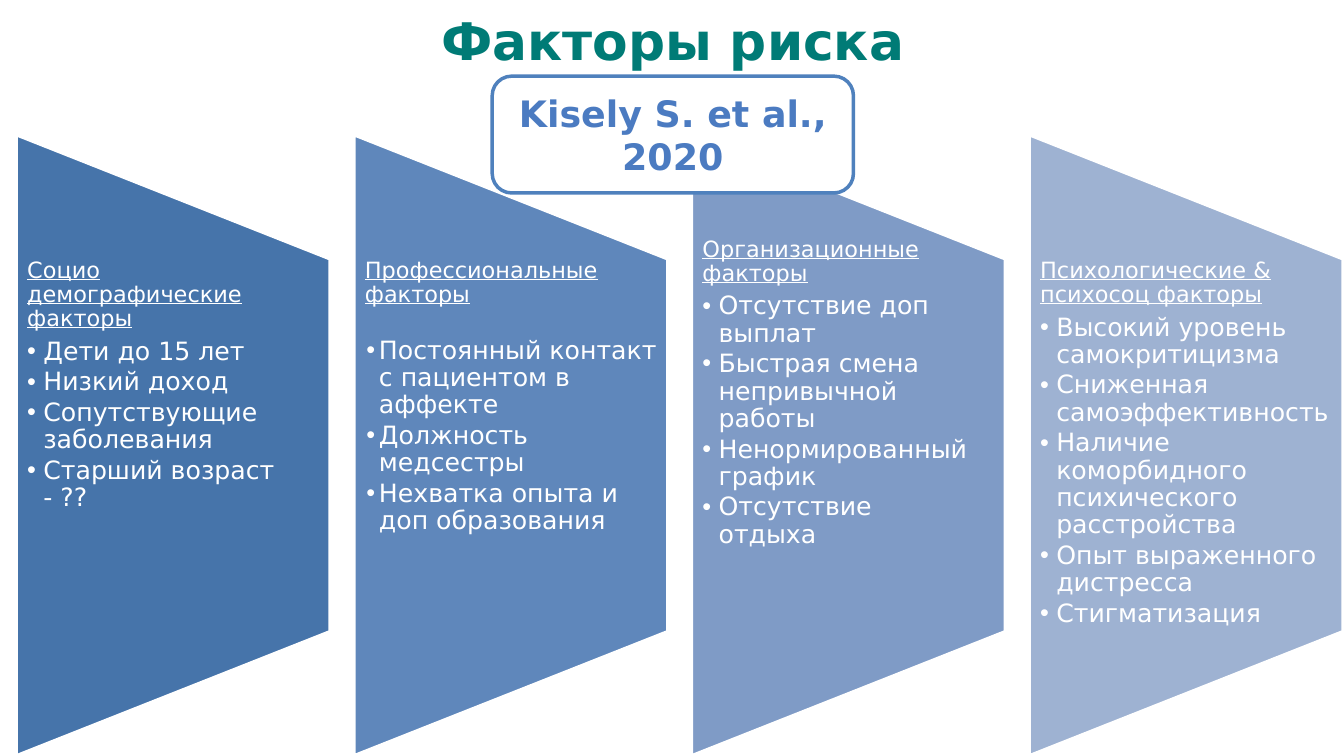
from dataclasses import dataclass

from lxml import etree
from pptx import Presentation
from pptx.dml.color import RGBColor
from pptx.enum.shapes import MSO_SHAPE
from pptx.enum.text import MSO_ANCHOR, MSO_AUTO_SIZE, PP_ALIGN
from pptx.oxml.ns import qn
from pptx.util import Inches, Pt

ROUNDED = MSO_SHAPE.ROUNDED_RECTANGLE
TOP, MIDDLE = MSO_ANCHOR.TOP, MSO_ANCHOR.MIDDLE
LEFT, CENTER = PP_ALIGN.LEFT, PP_ALIGN.CENTER
NO_AUTOFIT = MSO_AUTO_SIZE.NONE

FONT = "DejaVu Sans"
WHITE = RGBColor(0xFF, 0xFF, 0xFF)
TEAL = RGBColor(0x00, 0x7B, 0x76)
CALLOUT_LINE = RGBColor(0x4F, 0x81, 0xBD)
CALLOUT_TEXT = RGBColor(0x4B, 0x7B, 0xC1)
PANEL_BLUES = (
    RGBColor(0x46, 0x74, 0xAA),
    RGBColor(0x5F, 0x87, 0xBB),
    RGBColor(0x7F, 0x9B, 0xC6),
    RGBColor(0x9E, 0xB2, 0xD2),
)

SLIDE_WIDTH, SLIDE_HEIGHT = Inches(26.67), Inches(15)
# Four columns; the panels are five rows high, their slanted edges one row.
GRID_LEFT, GRID_TOP = Inches(0.32), Inches(2.67)
COLUMN = Inches(6.7)
ROW = (SLIDE_HEIGHT - GRID_TOP) / 5
PANEL_COLUMNS = 0.93
TEXT_COLUMNS = 0.87
TEXT_OFFSET = Inches(0.22)
COMPARISON_LAYOUT = 4


@dataclass(frozen=True)
class FactorGroup:
    heading: str
    factors: tuple[str, ...]
    text_row: float = 1
    first_gap: float = 10
    bullet_margin: float = 0.32
    bullet_hang: float = 0.32


GROUPS = (
    FactorGroup(
        "Социо\nдемографические\nфакторы",
        (
            "Дети до 15 лет",
            "Низкий доход",
            "Сопутствующие\nзаболевания",
            "Старший возраст - ??",
        ),
    ),
    FactorGroup(
        "Профессиональные\nфакторы",
        (
            "Постоянный контакт с пациентом в аффекте",
            "Должность медсестры",
            "Нехватка опыта и доп образования",
        ),
        first_gap=43,
        bullet_margin=0.28,
        bullet_hang=0.25,
    ),
    FactorGroup(
        "Организационные\nфакторы",
        (
            "Отсутствие доп выплат",
            "Быстрая смена непривычной работы",
            "Ненормированный график",
            "Отсутствие\nотдыха",
        ),
        text_row=0.83,
    ),
    FactorGroup(
        "Психологические &\nпсихосоц факторы",
        (
            "Высокий уровень самокритицизма",
            "Сниженная самоэффективность",
            "Наличие коморбидного психического расстройства",
            "Опыт выраженного дистресса",
            "Стигматизация",
        ),
    ),
)


def column_x(column: float) -> int:
    return int(GRID_LEFT + column * COLUMN)


def row_y(row: float) -> int:
    return int(GRID_TOP + row * ROW)


def place(shape, column: float, row: float, columns: float, rows: float) -> None:
    shape.left, shape.top = column_x(column), row_y(row)
    shape.width, shape.height = int(columns * COLUMN), int(rows * ROW)


def prepare_frame(frame, anchor, inset: float) -> None:
    frame.word_wrap = True
    frame.auto_size = NO_AUTOFIT
    frame.vertical_anchor = anchor
    frame.margin_left = frame.margin_right = Inches(inset)
    frame.margin_top = frame.margin_bottom = Inches(inset)


def write(paragraph, text: str, *, size: float, color: RGBColor, bold=False,
          underline=False, align=LEFT, spacing=1.0, before=0.0) -> None:
    paragraph.alignment = align
    paragraph.line_spacing = spacing
    paragraph.space_before = Pt(before)
    for number, line in enumerate(text.split("\n")):
        if number:
            paragraph.add_line_break()
        run = paragraph.add_run()
        run.text = line
        font = run.font
        font.name, font.size = FONT, Pt(size)
        font.bold, font.underline = bold, underline
        font.color.rgb = color


def set_bullet(paragraph, margin: float, hang: float, mark: str = "") -> None:
    """Indent a paragraph in inches; an empty mark switches its bullet off."""
    properties = paragraph._p.get_or_add_pPr()
    properties.set("marL", str(Inches(margin)))
    properties.set("indent", str(-Inches(hang)))
    if mark:
        color = etree.SubElement(properties, qn("a:buClr"))
        etree.SubElement(color, qn("a:srgbClr")).set("val", str(WHITE))
        etree.SubElement(properties, qn("a:buChar")).set("char", mark)
    else:
        etree.SubElement(properties, qn("a:buNone"))


def draw_panel(slide, column: int, color: RGBColor) -> None:
    left, right = column_x(column), column_x(column + PANEL_COLUMNS)
    builder = slide.shapes.build_freeform(left, row_y(5))
    builder.add_line_segments(
        [(left, row_y(0)), (right, row_y(1)), (right, row_y(4))], close=True
    )
    panel = builder.convert_to_shape()
    panel.shadow.inherit = False
    panel.fill.solid()
    panel.fill.fore_color.rgb = color
    panel.line.color.rgb = WHITE
    panel.line.width = Pt(5)


def fill_list(placeholder, column: int, group: FactorGroup) -> None:
    place(placeholder, column, group.text_row, TEXT_COLUMNS, 3)
    placeholder.left += TEXT_OFFSET
    frame = placeholder.text_frame
    prepare_frame(frame, TOP, 0)
    heading = frame.paragraphs[0]
    write(heading, group.heading, size=32, color=WHITE, underline=True, spacing=0.9)
    set_bullet(heading, 0, 0)
    for number, factor in enumerate(group.factors):
        paragraph = frame.add_paragraph()
        paragraph.level = 1
        write(paragraph, factor, size=36, color=WHITE, spacing=0.9,
              before=5 if number else group.first_gap)
        set_bullet(paragraph, group.bullet_margin, group.bullet_hang, "•")


def draw_callout(slide, text: str) -> None:
    callout = slide.shapes.add_shape(ROUNDED, 0, 0, 0, 0)
    place(callout, 1.41, -0.47, 1.07, 0.94)
    callout.shadow.inherit = False
    callout.fill.solid()
    callout.fill.fore_color.rgb = WHITE
    callout.line.color.rgb = CALLOUT_LINE
    callout.line.width = Pt(5)
    prepare_frame(callout.text_frame, MIDDLE, 0.13)
    write(callout.text_frame.paragraphs[0], text, size=52, color=CALLOUT_TEXT,
          bold=True, align=CENTER)


def main() -> None:
    presentation = Presentation()
    presentation.slide_width, presentation.slide_height = SLIDE_WIDTH, SLIDE_HEIGHT
    slide = presentation.slides.add_slide(presentation.slide_layouts[COMPARISON_LAYOUT])
    title, *lists = slide.placeholders

    place(title, 0.23, -1.27, 3.43, 1.01)
    prepare_frame(title.text_frame, MIDDLE, 0.06)
    write(title.text_frame.paragraphs[0], "Факторы риска", size=74, color=TEAL,
          bold=True, align=CENTER)

    for column, (group, color, body) in enumerate(zip(GROUPS, PANEL_BLUES, lists)):
        draw_panel(slide, column, color)
        fill_list(body, column, group)
        slide.shapes._spTree.append(body._element)  # bring the list above its panel
    draw_callout(slide, "Kisely S. et al.,\n2020")
    presentation.save("out.pptx")


if __name__ == "__main__":
    main()
